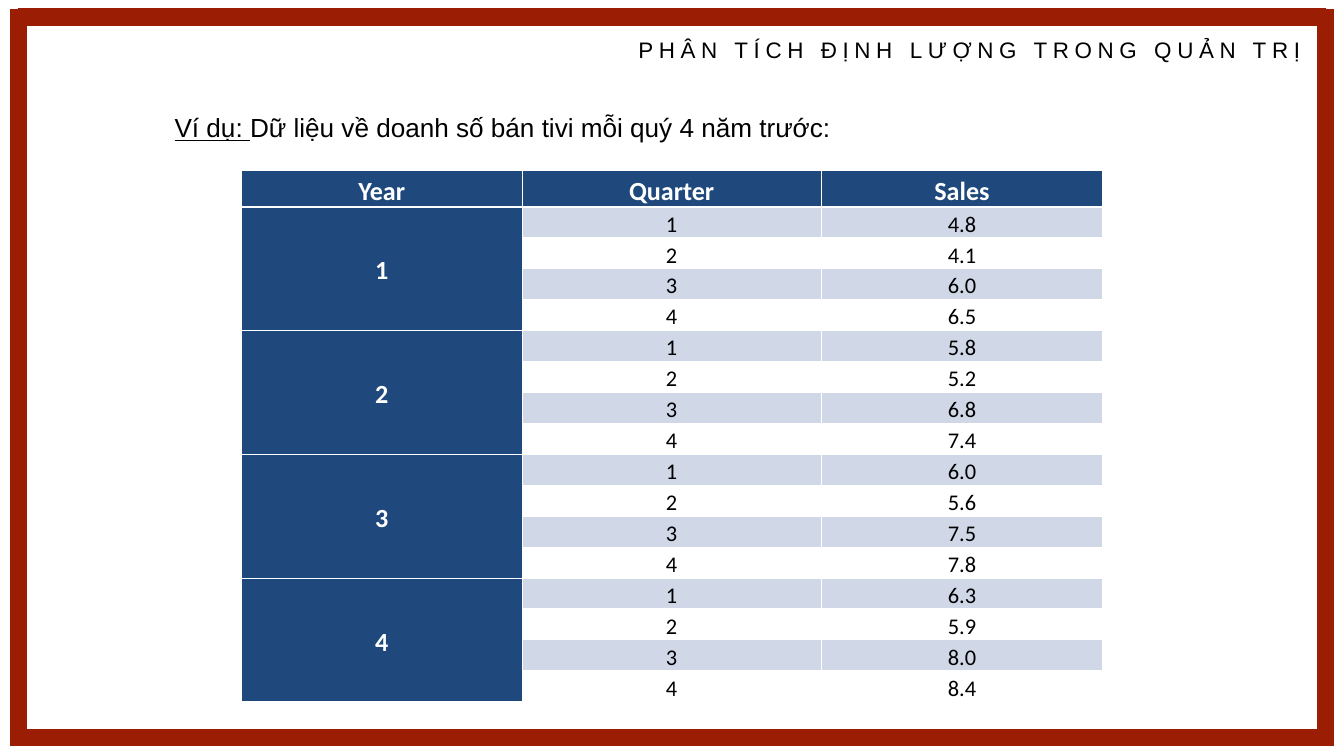
from dataclasses import dataclass

from lxml.etree import SubElement
from pptx import Presentation
from pptx.dml.color import RGBColor
from pptx.enum.shapes import MSO_SHAPE
from pptx.enum.text import MSO_ANCHOR, MSO_AUTO_SIZE, PP_ALIGN
from pptx.oxml.ns import qn
from pptx.util import Inches, Pt


@dataclass(frozen=True)
class Theme:
    frame: RGBColor = RGBColor(0x9A, 0x1D, 0x04)
    navy: RGBColor = RGBColor(0x1F, 0x49, 0x7D)
    band: RGBColor = RGBColor(0xD0, 0xD8, 0xE8)
    white: RGBColor = RGBColor(0xFF, 0xFF, 0xFF)
    black: RGBColor = RGBColor(0, 0, 0)
    text_font: str = "Arial"
    table_font: str = "Calibri"
    large: Pt = Pt(28)
    normal: Pt = Pt(24)


THEME = Theme()
HEADINGS = ["Year", "Quarter", "Sales"]
SALES_BY_YEAR = [
    ["4.8", "4.1", "6.0", "6.5"],
    ["5.8", "5.2", "6.8", "7.4"],
    ["6.0", "5.6", "7.5", "7.8"],
    ["6.3", "5.9", "8.0", "8.4"],
]


def style_font(font, name, size, color, bold=False):
    font.name, font.size, font.bold = name, size, bold
    font.color.rgb = color


def add_frame(slide, left, top, width, height):
    """Thick red border with a thin outline that starts slightly higher."""
    group = slide.shapes.add_group_shape()
    rise = 0.14
    for lift, weight in ((0, 18), (rise, 0.75)):
        border = group.shapes.add_shape(
            MSO_SHAPE.RECTANGLE, Inches(left), Inches(top - lift),
            Inches(width), Inches(height + lift))
        border.shadow.inherit = False
        border.fill.background()
        border.line.color.rgb = THEME.frame
        border.line.width = Pt(weight)
        SubElement(border.line.fill._xPr, qn("a:miter"), lim="800000")


def add_header(slide, left, top, width, height):
    """Course name, widely spaced, in the title placeholder."""
    header = slide.shapes.title
    header.left, header.top = Inches(left), Inches(top)
    header.width, header.height = Inches(width), Inches(height)
    frame = header.text_frame
    frame.text = "PHÂN TÍCH ĐỊNH LƯỢNG TRONG QUẢN TRỊ"
    frame.margin_left = frame.margin_right = 0
    frame.margin_top = frame.margin_bottom = 0
    frame.vertical_anchor = MSO_ANCHOR.TOP
    frame.auto_size = MSO_AUTO_SIZE.NONE
    course = frame.paragraphs[0]
    course.alignment = PP_ALIGN.LEFT
    for run in course.runs:
        style_font(run.font, THEME.text_font, THEME.normal, THEME.black)
        run.font._rPr.set("spc", "600")


def add_intro(slide, left, top, width, height):
    """Example sentence with an underlined lead-in."""
    intro = slide.shapes.add_textbox(
        Inches(left), Inches(top), Inches(width), Inches(height))
    intro.text_frame.word_wrap = True
    sentence = intro.text_frame.paragraphs[0]
    for words, underlined in (
            ("Ví dụ: ", True),
            ("Dữ liệu về doanh số bán tivi mỗi quý 4 năm trước:", False)):
        run = sentence.add_run()
        run.text = words
        style_font(run.font, THEME.text_font, THEME.large, THEME.black)
        run.font.underline = underlined


def add_borders(cell, bottom_weight):
    properties = cell._tc.get_or_add_tcPr()
    for side, weight in (("L", 1), ("R", 1), ("T", 1), ("B", bottom_weight)):
        line = SubElement(properties, qn(f"a:ln{side}"), w=str(Pt(weight)))
        fill = SubElement(line, qn("a:solidFill"))
        SubElement(fill, qn("a:srgbClr"), val=str(THEME.white))


def fill_cell(cell, text, fill, is_label, bottom_weight=1):
    add_borders(cell, bottom_weight)
    cell.fill.solid()
    cell.fill.fore_color.rgb = fill
    cell.margin_left = cell.margin_right = Inches(0.07)
    cell.margin_top = cell.margin_bottom = 0
    cell.text_frame.text = text
    value = cell.text_frame.paragraphs[0]
    value.alignment = PP_ALIGN.CENTER
    value.line_spacing = 1.15
    size, color = ((THEME.large, THEME.white) if is_label
                   else (THEME.normal, THEME.black))
    style_font(value.font, THEME.table_font, size, color, is_label)
    for run in value.runs:
        style_font(run.font, THEME.table_font, size, color, is_label)


def add_sales_table(slide, left, top, width, height):
    """One merged year cell beside the four quarters of each year."""
    quarters = len(SALES_BY_YEAR[0])
    row_count = 1 + len(SALES_BY_YEAR) * quarters
    holder = slide.shapes.add_table(
        row_count, len(HEADINGS), Inches(left), Inches(top),
        Inches(width), Inches(height))
    table = holder.table
    for column, share in zip(table.columns, (4.18, 4.45, 4.19)):
        column.width = Inches(share)
    for index, row in enumerate(table.rows):
        row.height = Inches(0.37 if index else 0.53)
    holder.height = Inches(height)

    for column, heading in enumerate(HEADINGS):
        fill_cell(table.cell(0, column), heading, THEME.navy, True, 3)

    for year, sales in enumerate(SALES_BY_YEAR):
        first = 1 + year * quarters
        for quarter, amount in enumerate(sales):
            row = first + quarter
            band = THEME.white if quarter % 2 else THEME.band
            fill_cell(table.cell(row, 0), "" if quarter else str(year + 1),
                      THEME.navy, True)
            fill_cell(table.cell(row, 1), str(quarter + 1), band, False)
            fill_cell(table.cell(row, 2), amount, band, False)
        year_cell = table.cell(first, 0)
        year_cell.merge(table.cell(first + quarters - 1, 0))
        year_cell.vertical_anchor = MSO_ANCHOR.MIDDLE


def main():
    deck = Presentation()
    deck.slide_width, deck.slide_height = Inches(20), Inches(11.25)
    slide = deck.slides.add_slide(deck.slide_layouts[5])  # title only
    add_frame(slide, 0.27, 0.26, 19.46, 10.72)
    add_intro(slide, 2.5, 1.61, 10, 0.57)
    add_sales_table(slide, 3.59, 2.54, 12.82, 7.46)
    add_header(slide, 9.5, 0.53, 10.4, 0.4)
    deck.save("out.pptx")


if __name__ == "__main__":
    main()
